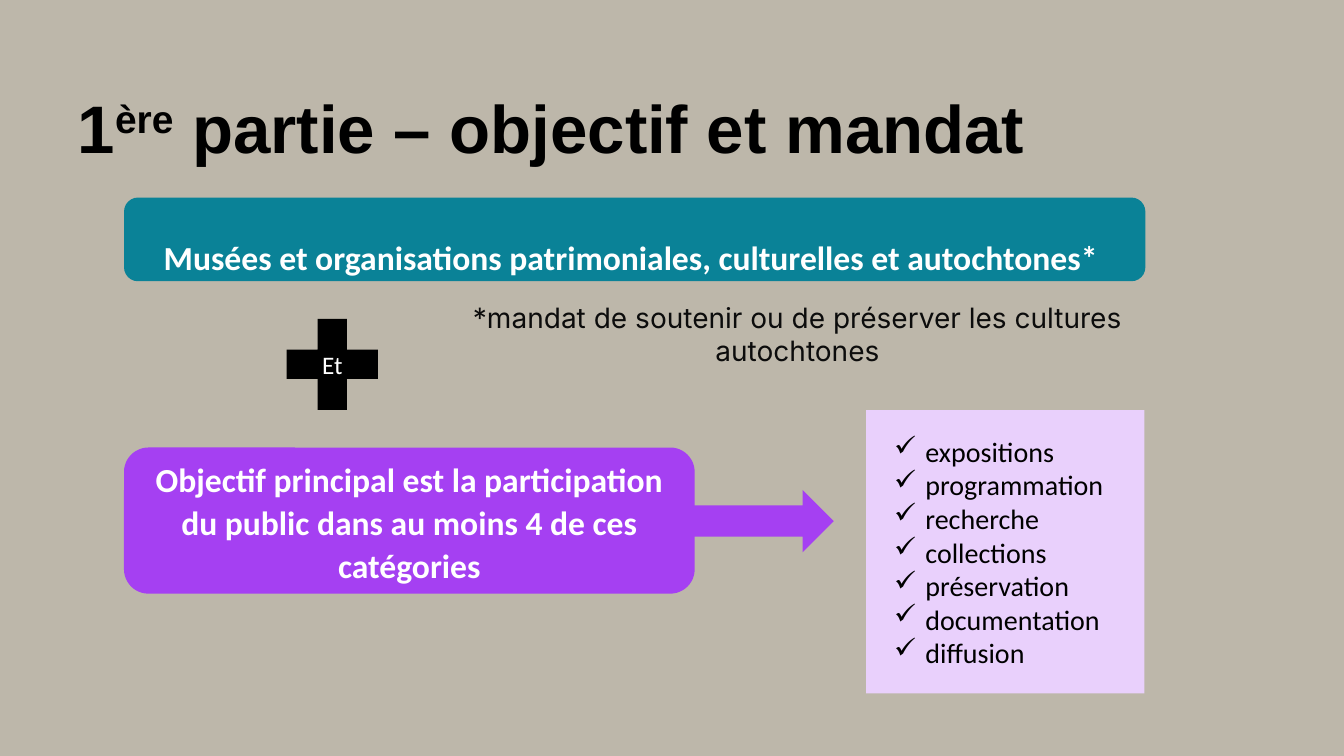
"""Build the slide on the purpose and mandate of museums."""
from lxml import etree
from pptx import Presentation
from pptx.dml.color import RGBColor
from pptx.enum.shapes import MSO_SHAPE
from pptx.enum.text import MSO_ANCHOR, PP_ALIGN
from pptx.oxml.ns import qn
from pptx.util import Inches, Pt

ROUNDED = MSO_SHAPE.ROUNDED_RECTANGLE
RECTANGLE = MSO_SHAPE.RECTANGLE
PLUS = MSO_SHAPE.MATH_PLUS
ARROW = MSO_SHAPE.RIGHT_ARROW
MIDDLE = MSO_ANCHOR.MIDDLE
TOP = MSO_ANCHOR.TOP
CENTER = PP_ALIGN.CENTER
LEFT = PP_ALIGN.LEFT

WIDTH, HEIGHT = Inches(13.33), Inches(7.5)
SAND, TEAL, VIOLET, LILAC = "BDB7AA", "0A8297", "A540F2", "E9D0FC"
BLACK, WHITE, INK = "000000", "FFFFFF", "0C0C0C"
CATEGORIES = ["expositions", "programmation", "recherche", "collections",
              "préservation", "documentation", "diffusion"]


def paint(fill, color):
    """Give a fill one solid colour."""
    fill.solid()
    fill.fore_color.rgb = RGBColor.from_string(color)


def place(left, top, width, height):
    """Turn percentages of the slide into a position and size."""
    return (int(WIDTH * left / 100), int(HEIGHT * top / 100),
            int(WIDTH * width / 100), int(HEIGHT * height / 100))


def add_block(page, kind, area, color):
    """Add a flat preset shape without outline or shadow."""
    block = page.shapes.add_shape(kind, *place(*area))
    paint(block.fill, color)
    block.line.fill.background()
    block.shadow.inherit = False
    return block


def write(box, text, size, color, font="Calibri", bold=False,
          align=CENTER, anchor=MIDDLE):
    """Fill a box with wrapped text in one style."""
    frame = box.text_frame
    frame.text = text
    frame.word_wrap = True
    frame.vertical_anchor = anchor
    for para in frame.paragraphs:
        para.alignment = align
        for span in para.runs:
            style(span, size, color, font, bold)
    return frame


def style(span, size, color, font, bold):
    """Set the font of a run."""
    span.font.size = Pt(size)
    span.font.name = font
    span.font.bold = bold
    span.font.color.rgb = RGBColor.from_string(color)


def add_check(para):
    """Hang a check mark in front of a paragraph."""
    properties = para._p.get_or_add_pPr()
    properties.set("marL", str(Inches(0.49)))
    properties.set("indent", str(-Inches(0.31)))
    etree.SubElement(properties, qn("a:buChar")).set("char", "✓")


def add_title(page):
    """Add the heading with its raised ordinal ending."""
    box = page.shapes.add_textbox(*place(5.78, 10.67, 90.32, 15.47))
    frame = write(box, "1", 48, BLACK, "Arial", True, LEFT)
    frame.margin_left = frame.margin_right = frame.margin_top = 0
    frame.margin_bottom = Inches(0.28)
    para = frame.paragraphs[0]
    para.line_spacing = Pt(60)
    for text, baseline in (("ère", 30), (" partie – objectif et mandat", 0)):
        span = para.add_run()
        span.text = text
        style(span, 48, BLACK, "Arial", True)
        span._r.get_or_add_rPr().set("baseline", str(baseline * 1000))


def main():
    """Compose the slide and save the deck."""
    deck = Presentation()
    deck.slide_width, deck.slide_height = WIDTH, HEIGHT
    page = deck.slides.add_slide(deck.slide_layouts[6])
    paint(page.background.fill, SAND)
    add_title(page)

    banner = add_block(page, ROUNDED, (9.23, 26.13, 75.99, 11.07), TEAL)
    frame = write(banner, "Musées et organisations patrimoniales, culturelles "
                  "et autochtones* ", 24, WHITE, bold=True)
    frame.margin_top = Inches(0.39)

    note = page.shapes.add_textbox(*place(30.46, 39.07, 57.76, 5.87))
    write(note, "*mandat de soutenir ou de préserver les cultures autochtones",
          20, INK, "Inter", anchor=TOP)

    plus = add_block(page, PLUS, (20.11, 40, 9.23, 16.4), BLACK)
    write(plus, "Et", 18, WHITE)

    goal = add_block(page, ROUNDED, (9.23, 59.2, 42.46, 19.33), VIOLET)
    frame = write(goal, "Objectif principal est la participation du public "
                  "dans au moins 4 de ces catégories", 24, WHITE, bold=True)
    frame.paragraphs[0].line_spacing = 1.07
    frame.paragraphs[0].space_after = Pt(8)

    checklist = add_block(page, RECTANGLE, (64.44, 54.27, 20.71, 37.47), LILAC)
    frame = write(checklist, "\n".join(CATEGORIES), 20, BLACK, align=LEFT)
    for para in frame.paragraphs:
        add_check(para)

    add_block(page, ARROW, (51.01, 64.8, 11.03, 8.27), VIOLET)
    deck.save("out.pptx")


if __name__ == "__main__":
    main()
